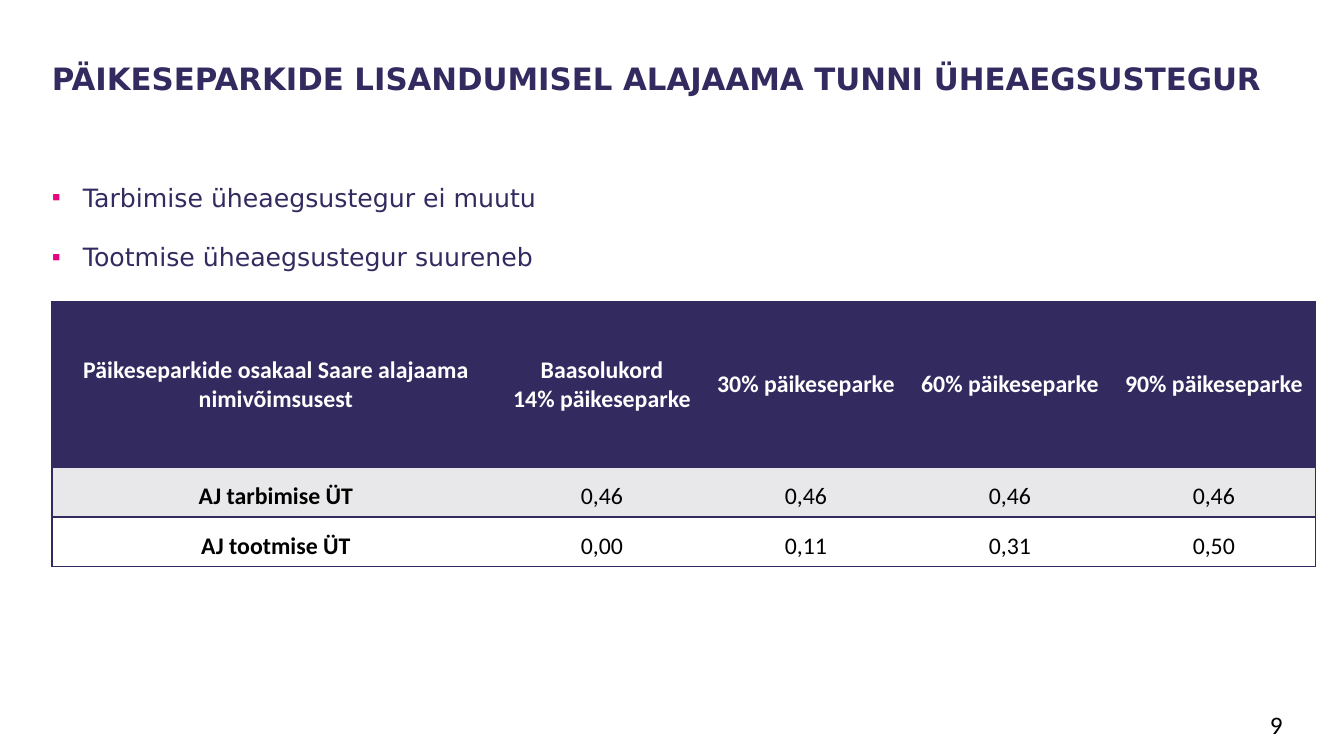
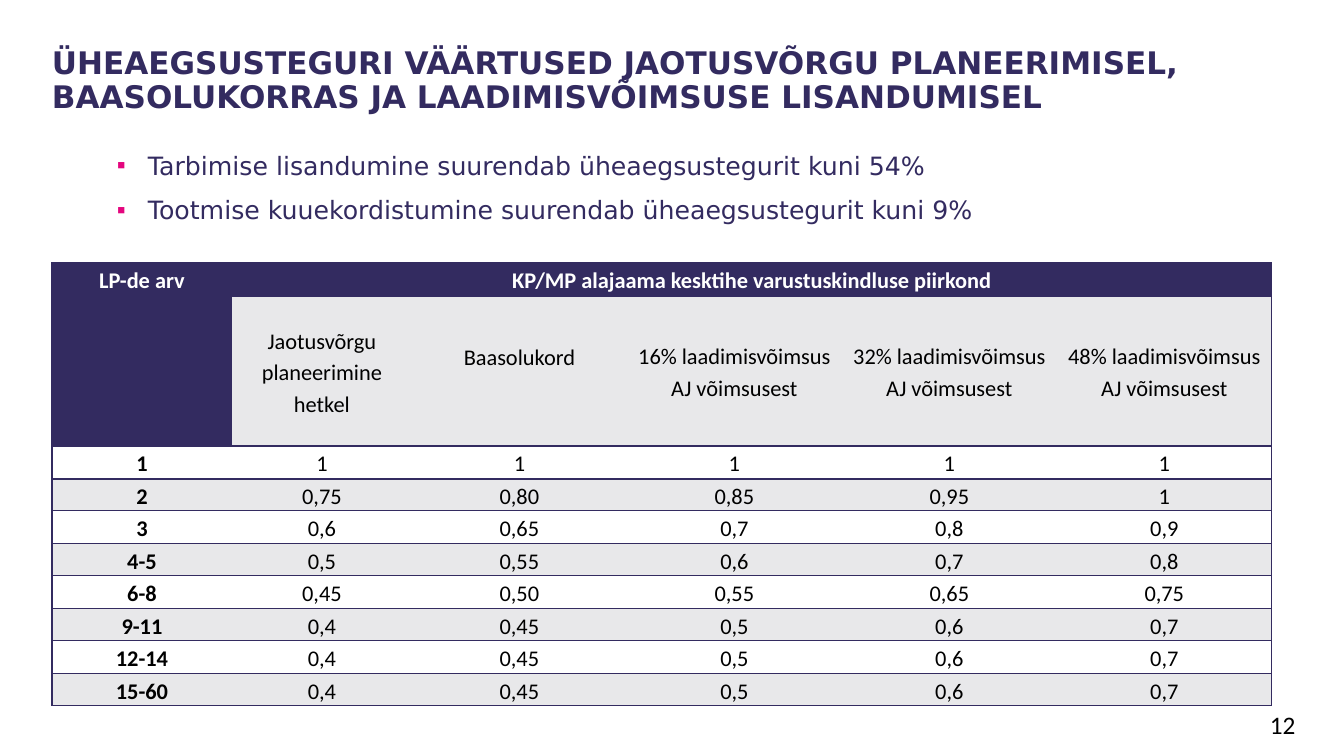
"""Build two slides on simultaneity factors, each with a title, bullets and a table."""
from lxml.etree import SubElement
from pptx import Presentation
from pptx.dml.color import RGBColor
from pptx.enum.text import MSO_ANCHOR as Anchor, MSO_AUTO_SIZE as Fit, PP_ALIGN as Align
from pptx.oxml.ns import qn
from pptx.util import Pt

NAVY = RGBColor(0x33, 0x2B, 0x60)
PINK = RGBColor(0xE4, 0x06, 0x7E)
GREY = RGBColor(0xE8, 0xE8, 0xEA)
WHITE = RGBColor(0xFF, 0xFF, 0xFF)
BLACK = RGBColor(0, 0, 0)
HEAD, TEXT = "DejaVu Sans", "Calibri"
WIDE, HIGH, LEFT = 1344, 756, 52

SLIDES = [
    {
        "page": "9",
        "title": "PÄIKESEPARKIDE LISANDUMISEL ALAJAAMA TUNNI ÜHEAEGSUSTEGUR",
        "head": (LEFT, 60, 1263, 90), "size": 22, "lead": 1.0,
        "points": ["Tarbimise üheaegsustegur ei muutu", "Tootmise üheaegsustegur suureneb"],
        "list": (LEFT, 167, 1106, 110), "gap": 1.5,
        "rows": [
            ["Päikeseparkide osakaal Saare alajaama nimivõimsusest",
             "Baasolukord\n14% päikeseparke", "30% päikeseparke",
             "60% päikeseparke", "90% päikeseparke"],
            ["AJ tarbimise ÜT", "0,46", "0,46", "0,46", "0,46"],
            ["AJ tootmise ÜT", "0,00", "0,11", "0,31", "0,50"],
        ],
        "top": 302, "cols": [448] + [204] * 4, "highs": [165, 50, 50],
        "type": 17, "space": 1.5, "tight": [0], "mid": 0,
        "spans": [], "lift": {}, "band": 1,
    },
    {
        "page": "12",
        "title": "ÜHEAEGSUSTEGURI VÄÄRTUSED JAOTUSVÕRGU PLANEERIMISEL, "
                 "BAASOLUKORRAS JA LAADIMISVÕIMSUSE LISANDUMISEL",
        "head": (LEFT, 48, 1157, 102), "size": 22.2, "lead": 0.9,
        "points": ["Tarbimise lisandumine suurendab üheaegsustegurit kuni 54%",
                   "Tootmise kuuekordistumine suurendab üheaegsustegurit kuni 9%"],
        "list": (117, 150, 1093, 93), "gap": 1.0,
        "rows": [
            ["LP-de arv", "KP/MP alajaama kesktihe varustuskindluse piirkond", "", "", "", ""],
            ["", "Jaotusvõrgu planeerimine hetkel", "Baasolukord",
             "16% laadimisvõimsus AJ võimsusest", "32% laadimisvõimsus AJ võimsusest",
             "48% laadimisvõimsus AJ võimsusest"],
            ["1", "1", "1", "1", "1", "1"],
            ["2", "0,75", "0,80", "0,85", "0,95", "1"],
            ["3", "0,6", "0,65", "0,7", "0,8", "0,9"],
            ["4-5", "0,5", "0,55", "0,6", "0,7", "0,8"],
            ["6-8", "0,45", "0,50", "0,55", "0,65", "0,75"],
            ["9-11", "0,4", "0,45", "0,5", "0,6", "0,7"],
            ["12-14", "0,4", "0,45", "0,5", "0,6", "0,7"],
            ["15-60", "0,4", "0,45", "0,5", "0,6", "0,7"],
        ],
        "top": 263, "cols": [180] * 2 + [215] * 4, "highs": [33, 150] + [33, 32] * 4,
        "type": 16, "space": 1.15, "tight": [], "mid": 1,
        "spans": [((0, 0), (1, 0)), ((0, 1), (0, 5))], "lift": {(1, 2): 31}, "band": 1,
    },
]


def px(num):
    return round(num * 914400 / 100.8)


def style(para, face, size, color, bold=False):
    font = para.font
    font.name, font.size, font.bold = face, Pt(size), bold
    font.color.rgb = color


def place(shape, box):
    shape.left, shape.top, shape.width, shape.height = map(px, box)
    frame = shape.text_frame
    frame.margin_left = frame.margin_right = frame.margin_top = frame.margin_bottom = 0
    frame.word_wrap, frame.auto_size = True, Fit.NONE
    frame.vertical_anchor = Anchor.TOP
    return frame


def bullet(para):
    props = para._p.get_or_add_pPr()
    props.set("marL", str(px(31)))
    props.set("indent", str(px(-31)))
    tint = SubElement(props, qn("a:buClr"))
    SubElement(tint, qn("a:srgbClr")).set("val", str(PINK))
    SubElement(props, qn("a:buChar")).set("char", "▪")


def edge(cell, sides):
    props = cell._tc.get_or_add_tcPr()
    for side in "LRTB":
        line = SubElement(props, qn("a:ln" + side))
        if side in sides:
            line.set("w", str(Pt(1)))
            fill = SubElement(line, qn("a:solidFill"))
            SubElement(fill, qn("a:srgbClr")).set("val", str(NAVY))
        else:
            SubElement(line, qn("a:noFill"))


def add_head(slide, data):
    frame = place(slide.shapes.title, data["head"])
    frame.text = data["title"]
    para = frame.paragraphs[0]
    para.alignment, para.line_spacing = Align.LEFT, data["lead"]
    style(para, HEAD, data["size"], NAVY, True)


def add_list(slide, data):
    frame = place(slide.placeholders[1], data["list"])
    frame.text = "\n".join(data["points"])
    for i, para in enumerate(frame.paragraphs):
        bullet(para)
        para.line_spacing = data["gap"]
        para.space_before = Pt(10 if i else 0)
        style(para, HEAD, 18, NAVY)


def add_grid(slide, data):
    rows, cols, highs = data["rows"], data["cols"], data["highs"]
    box = (LEFT, data["top"], sum(cols), sum(highs))
    grid = slide.shapes.add_table(len(rows), len(cols), *map(px, box)).table
    grid.first_row = grid.horz_banding = False
    for col, wide in zip(grid.columns, cols):
        col.width = px(wide)
    for row, high in zip(grid.rows, highs):
        row.height = px(high)
    for start, end in data["spans"]:
        grid.cell(*start).merge(grid.cell(*end))
    for r, row in enumerate(rows):
        for c, text in enumerate(row):
            cell = grid.cell(r, c)
            top = r == 0
            dark = top or (c == 0 and not text)
            edge(cell, "TB" + "L" * (c == 0) + "R" * (c == len(cols) - 1))
            cell.fill.solid()
            cell.fill.fore_color.rgb = NAVY if dark else GREY if r % 2 == data["band"] else WHITE
            cell.margin_left = cell.margin_right = px(7)
            cell.margin_top, cell.margin_bottom = 0, px(data["lift"].get((r, c), 0))
            cell.vertical_anchor = Anchor.MIDDLE if r == data["mid"] else Anchor.TOP
            cell.text = text
            for para in cell.text_frame.paragraphs:
                para.alignment = Align.CENTER
                para.line_spacing = 1.0 if r in data["tight"] else data["space"]
                style(para, TEXT, data["type"], WHITE if dark else BLACK, top or c == 0)


def add_page(slide, num):
    frame = slide.shapes.add_textbox(*map(px, (1260, 704, 50, 40))).text_frame
    frame.word_wrap = False
    frame.text = num
    style(frame.paragraphs[0], TEXT, 18, BLACK)


def main():
    deck = Presentation()
    deck.slide_width, deck.slide_height = px(WIDE), px(HIGH)
    for data in SLIDES:
        slide = deck.slides.add_slide(deck.slide_layouts[1])
        add_head(slide, data)
        add_list(slide, data)
        add_grid(slide, data)
        add_page(slide, data["page"])
    deck.save("out.pptx")


if __name__ == "__main__":
    main()
